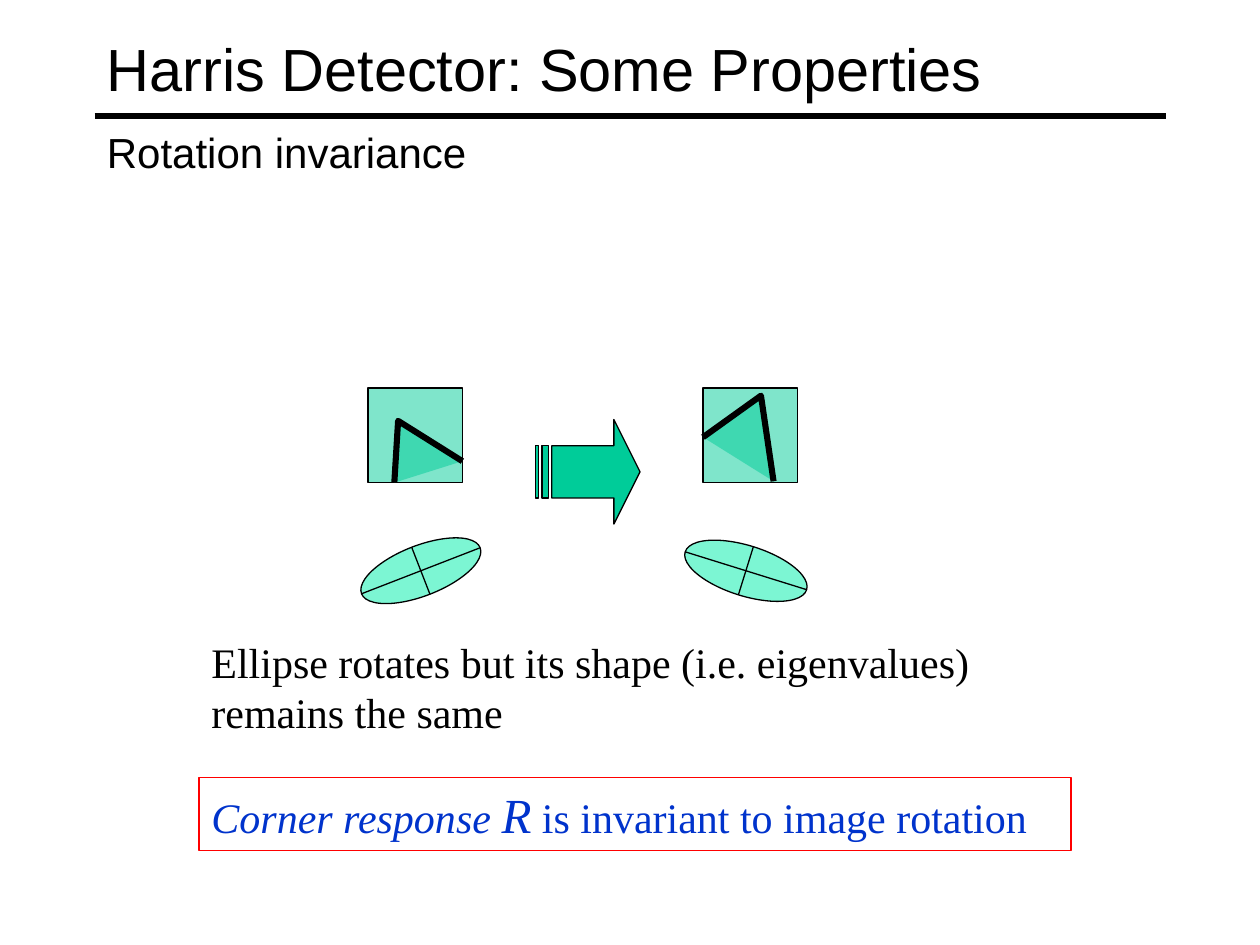
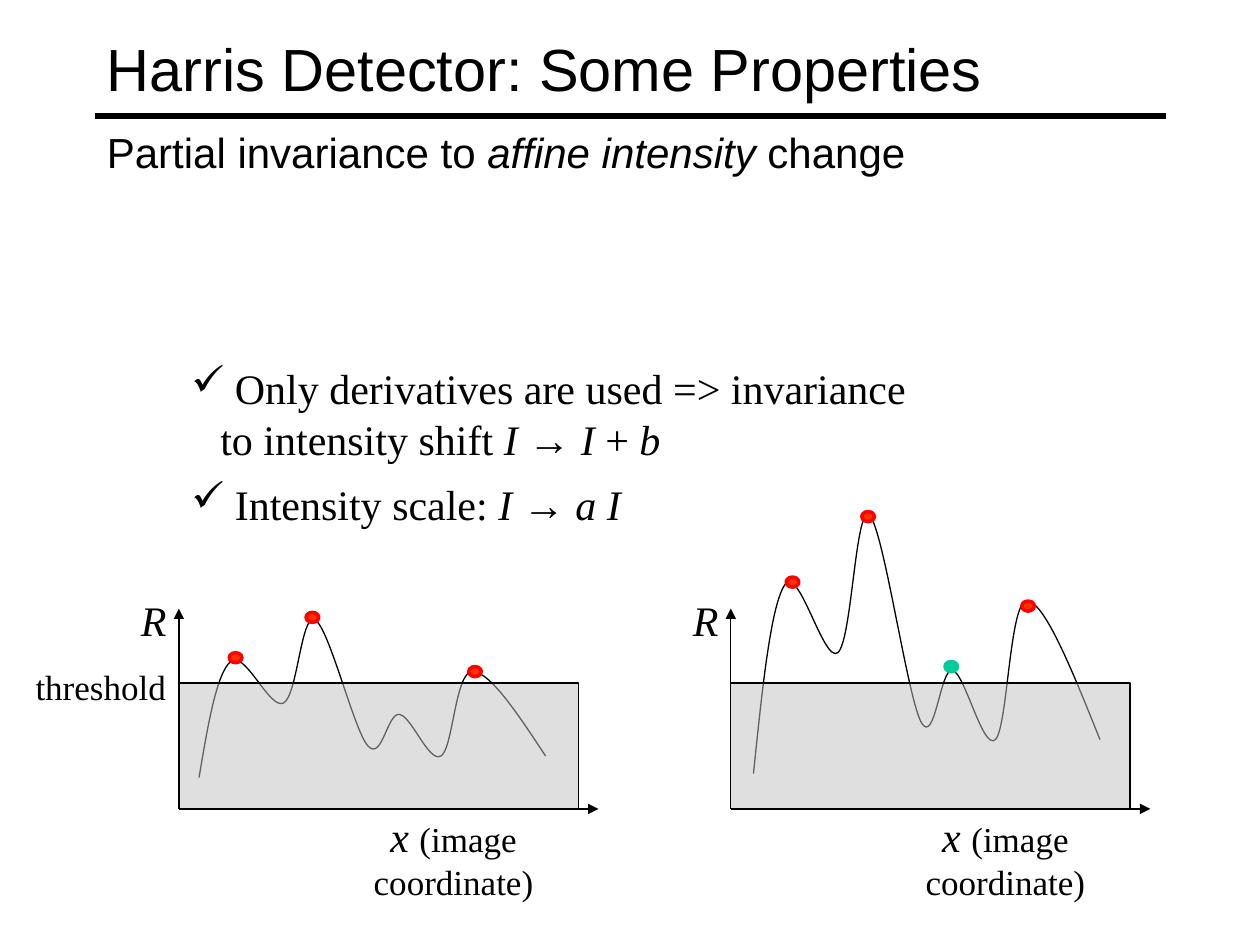
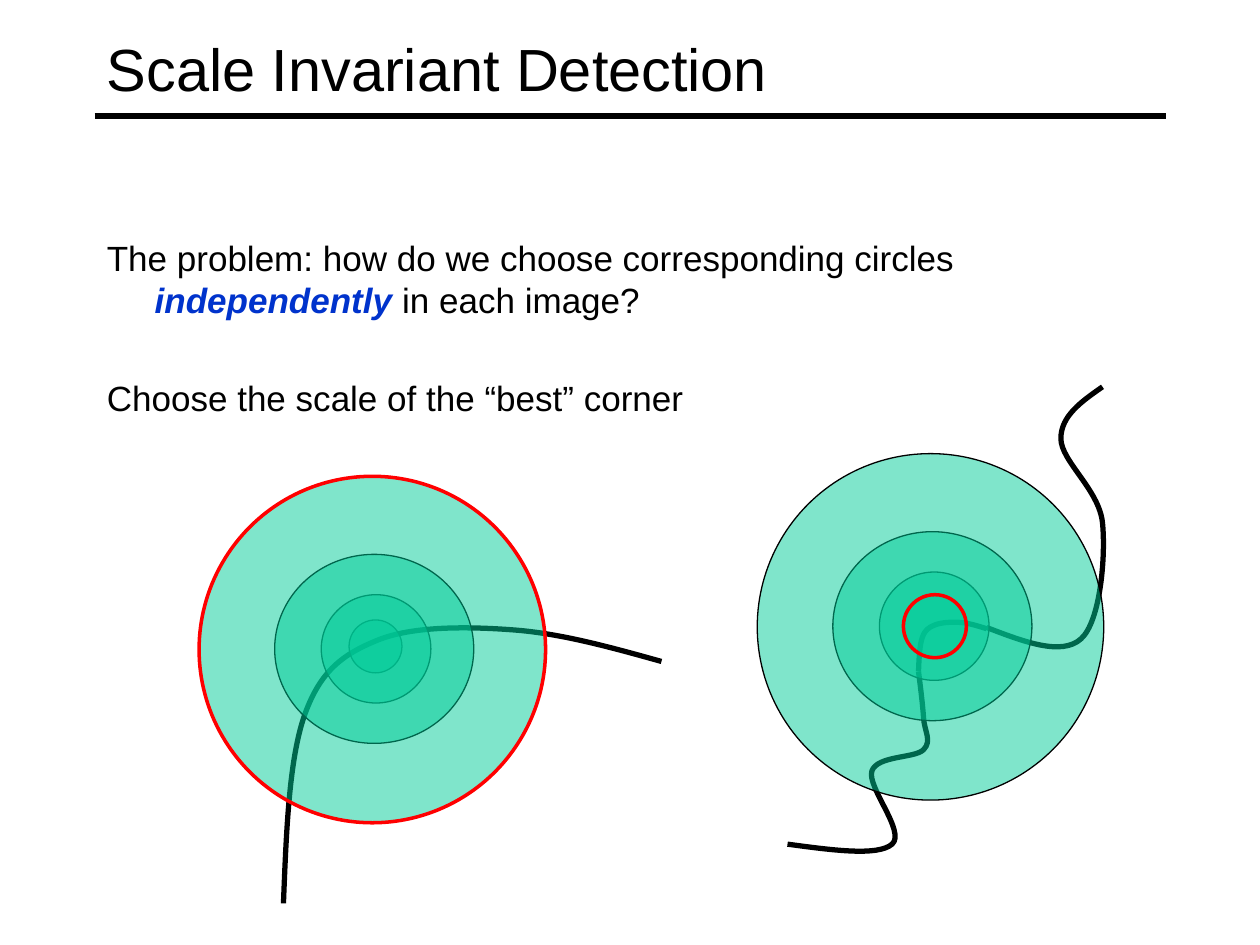
import math
from dataclasses import dataclass
from typing import NamedTuple, Optional

from lxml import etree
from pptx import Presentation
from pptx import util as u
from pptx.dml.color import RGBColor
from pptx.enum import shapes, text
from pptx.oxml import ns

BLACK = RGBColor(0x00, 0x00, 0x00)
BLUE = RGBColor(0x00, 0x33, 0xCC)
GREEN = RGBColor(0x00, 0xCC, 0x99)
MINT = RGBColor(0x7C, 0xF6, 0xD3)
GREY = RGBColor(0xC0, 0xC0, 0xC0)
RED = RGBColor(0xFF, 0x00, 0x00)
ORANGE = RGBColor(0xFF, 0x33, 0x00)
SANS, SERIF = "Arial", "Times New Roman"
THIN, DOT_LINE, THICK, CORNER_LINE = 0.75, 2, 3, 3.5
LEFT, CENTER = text.PP_ALIGN.LEFT, text.PP_ALIGN.CENTER
TOP, MIDDLE = text.MSO_ANCHOR.TOP, text.MSO_ANCHOR.MIDDLE
OVAL = shapes.MSO_SHAPE.OVAL
RECTANGLE = shapes.MSO_SHAPE.RECTANGLE


class Point(NamedTuple):
    x: float
    y: float


class Box(NamedTuple):
    left: float
    top: float
    width: float
    height: float

    def moved(self, dx: float, dy: float) -> "Box":
        return Box(self.left + dx, self.top + dy, self.width, self.height)


@dataclass(frozen=True)
class Piece:
    """A stretch of text in one format."""
    text: str
    size: float = 24
    italic: bool = False
    bold: bool = False
    color: RGBColor = BLACK


@dataclass(frozen=True)
class Look:
    """Fill and outline of a shape."""
    fill: Optional[RGBColor] = None
    line: RGBColor = BLACK
    width: float = THIN
    alpha: int = 100


@dataclass(frozen=True)
class Plot:
    """A corner response curve with its marked peaks."""
    left: float
    knots: list
    peaks: list
    missed: tuple = ()


GLASS = Look(GREEN, alpha=50)
RED_GLASS = Look(GREEN, RED, DOT_LINE, 50)


def inches(value: float) -> u.Cm:
    return u.Cm(value * 2.54)


def lengths(values) -> list:
    return [inches(value) for value in values]


# Drawing helpers
def apply_look(shape, look: Look) -> None:
    shape.shadow.inherit = False
    shape.line.color.rgb = look.line
    shape.line.width = u.Pt(look.width)
    if look.fill is None:
        shape.fill.background()
        return
    shape.fill.solid()
    shape.fill.fore_color.rgb = look.fill
    if look.alpha < 100:
        color = shape.element.spPr.find(ns.qn("a:solidFill"))[0]
        etree.SubElement(color, ns.qn("a:alpha"), val=str(look.alpha * 1000))


def add_shape(slide, kind, box: Box, look: Look, rotation: float = 0):
    shape = slide.shapes.add_shape(kind, *lengths(box))
    apply_look(shape, look)
    shape.rotation = rotation
    return shape


def add_line(slide, start: Point, end: Point, width: float = THIN, arrow: bool = False) -> None:
    connector = slide.shapes.add_connector(
        shapes.MSO_CONNECTOR.STRAIGHT, *lengths((*start, *end)))
    connector.line.color.rgb = BLACK
    connector.line.width = u.Pt(width)
    properties = connector.element.spPr
    if arrow:
        etree.SubElement(properties.find(ns.qn("a:ln")), ns.qn("a:tailEnd"), type="triangle")
    etree.SubElement(properties, ns.qn("a:effectLst"))


def add_outline(slide, points: list, look: Look):
    start, *others = [lengths(point) for point in points]
    builder = slide.shapes.build_freeform(*start)
    builder.add_line_segments(others, close=False)
    shape = builder.convert_to_shape()
    apply_look(shape, look)
    return shape


def control_points(knots: list) -> list:
    """Bezier points of a smooth curve: tangents follow the neighbouring knots."""
    def handle(index: int, sign: int) -> Point:
        before, knot, after = knots[index - 1:index + 2]
        return Point(knot[0] + sign * (after[0] - before[0]) / 6,
                     knot[1] + sign * (after[1] - before[1]) / 6)

    def middle(a, b) -> Point:
        return Point((a[0] + b[0]) / 2, (a[1] + b[1]) / 2)

    last = len(knots) - 1
    points = [knots[0]]
    for index in range(last):
        leaving = handle(index, 1) if index > 0 else None
        arriving = handle(index + 1, -1) if index + 1 < last else None
        points += [leaving or middle(knots[0], arriving),
                   arriving or middle(leaving, knots[last]),
                   knots[index + 1]]
    return points


def add_curve(slide, knots: list, width: float = THICK) -> None:
    shape = add_outline(slide, control_points(knots), Look(width=width))
    # Turn each three straight steps into one Bezier segment
    steps = list(shape.element.iter(ns.qn("a:lnTo")))
    outline = steps[0].getparent()
    for index in range(0, len(steps), 3):
        segment = etree.SubElement(outline, ns.qn("a:cubicBezTo"))
        for step in steps[index:index + 3]:
            segment.append(step[0])
            outline.remove(step)


def add_text(slide, box: Box, paragraphs: list, font: str = SERIF, align=LEFT, anchor=TOP,
             wrap: bool = True, hanging: float = 0, bullet: str = "",
             line_spacing: float = 1, gap: float = 0):
    shape = slide.shapes.add_textbox(*lengths(box))
    frame = shape.text_frame
    frame.word_wrap = wrap
    frame.vertical_anchor = anchor
    for index, pieces in enumerate(paragraphs):
        paragraph = frame.add_paragraph() if index else frame.paragraphs[0]
        paragraph.alignment = align
        paragraph.line_spacing = line_spacing
        if index:
            paragraph.space_before = u.Pt(gap)
        properties = paragraph._p.get_or_add_pPr()
        if hanging:
            properties.set("marL", str(inches(hanging)))
            properties.set("indent", str(-inches(hanging)))
        if bullet:
            etree.SubElement(properties, ns.qn("a:buChar"), char=bullet)
        for piece in pieces:
            run = paragraph.add_run()
            run.text = piece.text
            run.font.name = font
            run.font.size = u.Pt(piece.size)
            run.font.italic = piece.italic
            run.font.bold = piece.bold
            run.font.color.rgb = piece.color
    return shape


# Parts shared by the slides
def add_titled_slide(presentation, title: str):
    slide = presentation.slides.add_slide(presentation.slide_layouts[6])
    add_line(slide, Point(0.75, 0.92), Point(9.25, 0.92), THICK)
    add_text(slide, Box(0.75, 0.08, 8.5, 0.92), [[Piece(title, 34)]], SANS, anchor=MIDDLE)
    return slide


def add_subtitle(slide, pieces: list) -> None:
    add_text(slide, Box(0.75, 1, 8.5, 0.75), [pieces], SANS, hanging=0.38, line_spacing=0.9)


# Slide 1
def add_corner_window(slide, left: float, corner: list) -> None:
    add_shape(slide, RECTANGLE, Box(left, 3.08, 0.75, 0.75), GLASS)
    add_outline(slide, corner, Look(GREEN, width=CORNER_LINE, alpha=50))


def add_ellipse_with_axes(slide, center: Point, rotation: float) -> None:
    width, height = 1.01, 0.4
    box = Box(center.x - width / 2, center.y - height / 2, width, height)
    add_shape(slide, OVAL, box, Look(MINT), rotation)
    for length, angle in ((width, rotation), (height, rotation + 90)):
        dx = length / 2 * math.cos(math.radians(angle))
        dy = length / 2 * math.sin(math.radians(angle))
        add_line(slide, Point(center.x - dx, center.y - dy), Point(center.x + dx, center.y + dy))


def build_rotation_slide(presentation) -> None:
    slide = add_titled_slide(presentation, "Harris Detector: Some Properties")
    add_subtitle(slide, [Piece("Rotation invariance")])
    add_corner_window(slide, 2.92, [(3.13, 3.83), (3.16, 3.34), (3.67, 3.66)])
    add_corner_window(slide, 5.58, [(5.58, 3.47), (6.04, 3.14), (6.14, 3.82)])
    arrow = add_shape(slide, shapes.MSO_SHAPE.STRIPED_RIGHT_ARROW,
                      Box(4.25, 3.33, 0.83, 0.83), Look(GREEN))
    arrow.adjustments[1] = 0.25
    add_text(slide, Box(1.58, 5, 6.25, 0.9),
             [[Piece("Ellipse rotates but its shape (i.e. eigenvalues) remains the same")]])
    add_ellipse_with_axes(slide, Point(3.34, 4.53), 338.8)
    add_ellipse_with_axes(slide, Point(5.92, 4.53), 17.3)
    conclusion = add_text(slide, Box(1.58, 6.17, 6.92, 0.58), [[
        Piece("Corner response ", italic=True, color=BLUE),
        Piece("R", 28, italic=True, color=BLUE),
        Piece(" is invariant to image rotation", color=BLUE)]], anchor=MIDDLE)
    apply_look(conclusion, Look(line=RED))


# Slide 2
AXIS_Y, THRESHOLD_Y = 6.42, 5.42
PLOTS = [
    Plot(1.42,
         [(1.58, 6.17), (1.83, 5.25), (2.25, 5.58), (2.5, 4.92), (2.92, 5.92),
          (3.17, 5.67), (3.5, 6), (3.75, 5.33), (4.33, 6)],
         [(1.87, 5.22), (2.48, 4.9), (3.77, 5.33)]),
    Plot(5.8,
         [(5.98, 6.14), (6.23, 4.64), (6.65, 5.18), (6.9, 4.09), (7.31, 5.73),
          (7.56, 5.32), (7.9, 5.87), (8.15, 4.77), (8.73, 5.87)],
         [(6.29, 4.62), (6.89, 4.1), (8.16, 4.81)],
         ((7.55, 5.29),)),
]


def add_dots(slide, centers, look: Look) -> None:
    for x, y in centers:
        add_shape(slide, OVAL, Box(x - 0.05, y - 0.04, 0.1, 0.08), look)


def add_plot(slide, plot: Plot) -> None:
    origin = Point(plot.left, AXIS_Y)
    add_curve(slide, plot.knots, THIN)
    add_line(slide, origin, Point(plot.left + 3.33, AXIS_Y), arrow=True)
    add_line(slide, origin, Point(plot.left, 4.83), arrow=True)
    add_text(slide, Box(plot.left - 0.4, 4.67, 0.4, 0.5), [[Piece("R", italic=True)]],
             align=CENTER, wrap=False)
    add_text(slide, Box(plot.left + 1.06, 6.38, 2.24, 0.85),
             [[Piece("x ", italic=True), Piece("(image coordinate)", 20)]], align=CENTER)
    add_shape(slide, RECTANGLE, Box(plot.left, THRESHOLD_Y, 3.17, AXIS_Y - THRESHOLD_Y),
              Look(GREY, alpha=50))
    add_dots(slide, plot.peaks, Look(ORANGE, RED, DOT_LINE))
    add_dots(slide, plot.missed, Look(GREEN, GREEN, DOT_LINE))


def build_intensity_slide(presentation) -> None:
    slide = add_titled_slide(presentation, "Harris Detector: Some Properties")
    add_subtitle(slide, [Piece("Partial invariance to "),
                         Piece("affine intensity", italic=True), Piece(" change")])
    shift = [Piece(" Only derivatives are used => invariance to intensity shift "),
             Piece("I ", italic=True), Piece("→ "), Piece("I ", italic=True),
             Piece("+ "), Piece("b", italic=True)]
    scale = [Piece(" Intensity scale: "), Piece("I ", italic=True),
             Piece("→ "), Piece("a I", italic=True)]
    for box, pieces in ((Box(1.42, 2.83, 6.08, 0.9), shift), (Box(1.42, 3.75, 5.67, 0.5), scale)):
        add_text(slide, box, [pieces], hanging=0.23, bullet="✓")
    for plot in PLOTS:
        add_plot(slide, plot)
    add_text(slide, Box(0.1, 5.23, 1.4, 0.43), [[Piece("threshold", 20)]],
             align=CENTER, wrap=False)


# Slide 3
LEFT_CURVE = [(2.25, 7.17), (2.42, 5.67), (3, 5.08), (4.08, 5), (5.25, 5.25)]
UPPER_CURVE = [(7.83, 4.98), (8.58, 5.07), (8.75, 4.15), (8.42, 3.48), (8.75, 3.07)]
LOWER_CURVE = [(6.25, 6.7), (7.08, 6.7), (6.92, 6.12), (7.33, 5.95), (7.33, 5.7), (7.29, 5.33)]
BEND_CURVE = [(7.29, 5.33), (7.32, 5.06), (7.42, 4.96), (7.62, 4.94), (7.83, 4.99)]
INNER_RINGS = [Box(2.55, 4.72, 0.87, 0.86), Box(2.18, 4.4, 1.58, 1.5)]
OUTER_RING = Box(1.58, 3.78, 2.75, 2.75)
RIGHT_SHIFT = (4.43, -0.18)


def build_scale_slide(presentation) -> None:
    slide = add_titled_slide(presentation, "Scale Invariant Detection")
    add_curve(slide, UPPER_CURVE)
    add_curve(slide, LOWER_CURVE)
    add_text(slide, Box(0.75, 1.83, 8.5, 4.5), [
        [Piece("The problem: how do we choose corresponding circles ", 20),
         Piece("independently", 20, italic=True, bold=True, color=BLUE),
         Piece(" in each image?", 20)],
        [Piece("Choose the scale of the “best” corner", 20)],
    ], SANS, hanging=0.38, gap=32)

    # Candidate circles, with the best scale of each image in red
    add_curve(slide, LEFT_CURVE)
    for ring in (Box(2.77, 4.92, 0.42, 0.42), *INNER_RINGS):
        add_shape(slide, OVAL, ring, GLASS)
    add_shape(slide, OVAL, OUTER_RING, RED_GLASS)
    add_curve(slide, BEND_CURVE)
    for ring in (*INNER_RINGS, OUTER_RING):
        add_shape(slide, OVAL, ring.moved(*RIGHT_SHIFT), GLASS)
    add_shape(slide, OVAL, Box(7.17, 4.72, 0.5, 0.5), RED_GLASS)


def main() -> None:
    presentation = Presentation()
    presentation.slide_width, presentation.slide_height = u.Cm(25.4), u.Cm(19.05)
    build_rotation_slide(presentation)
    build_intensity_slide(presentation)
    build_scale_slide(presentation)
    presentation.save("out.pptx")


if __name__ == "__main__":
    main()
